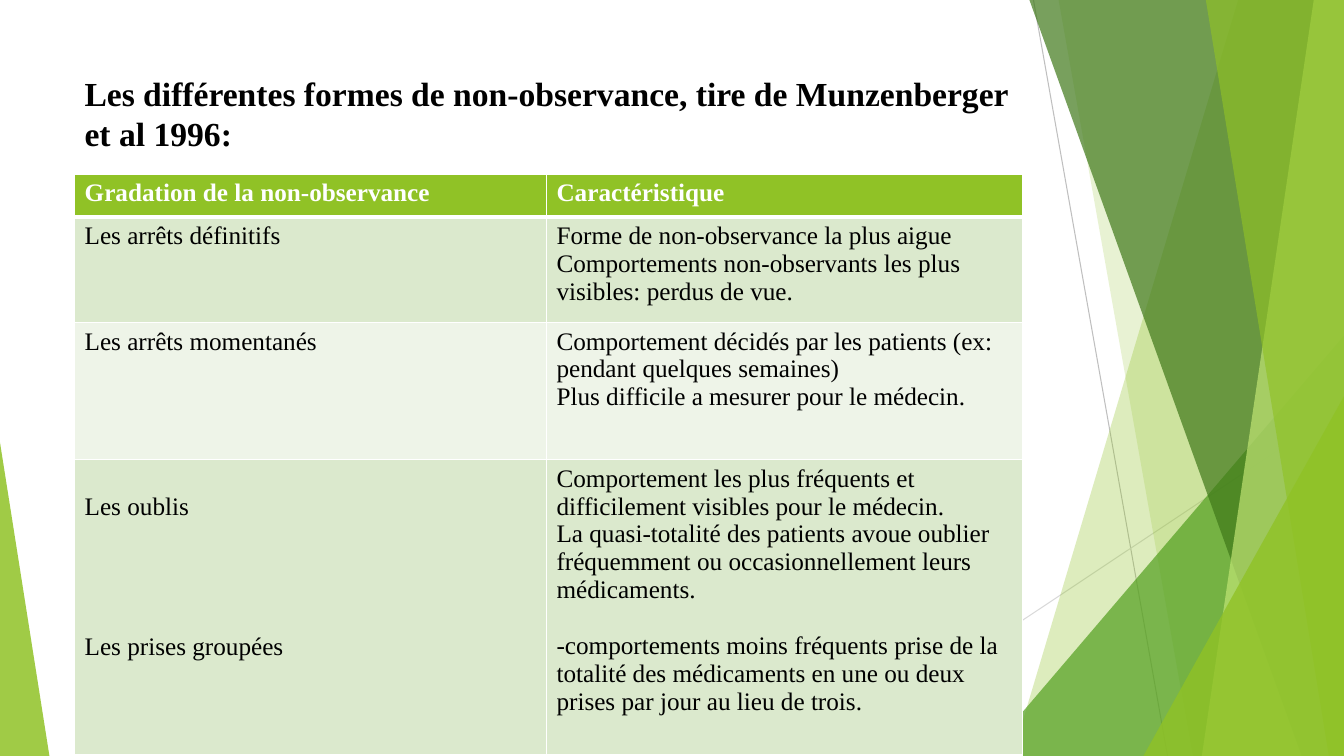
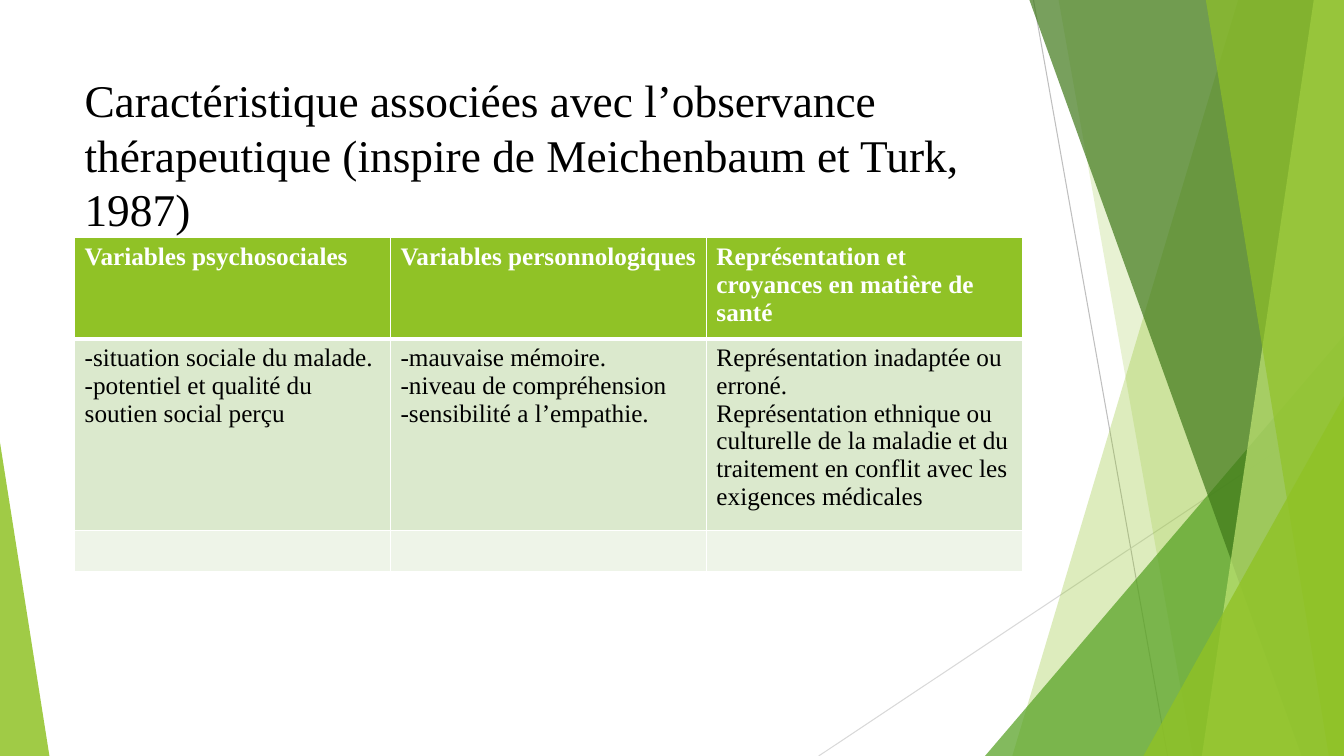
from dataclasses import dataclass

from lxml.etree import SubElement
from pptx import Presentation
from pptx.dml.color import RGBColor
from pptx.enum.shapes import MSO_CONNECTOR, MSO_SHAPE
from pptx.enum.text import MSO_ANCHOR
from pptx.oxml.ns import qn
from pptx.util import Inches, Pt

WIDTH, HEIGHT = 13.33, 7.5
LEFT, CONTENT_WIDTH = 0.74, 9.4


@dataclass(frozen=True)
class Theme:
    font: str = "Times New Roman"
    ink: str = "000000"
    white: str = "FFFFFF"
    lime: str = "90C226"
    pale_lime: str = "C0E474"
    green: str = "54A021"
    dark_green: str = "3F7819"
    odd_row: str = "DBE9CD"
    even_row: str = "EEF4E8"
    dark_rule: str = "BFBFBF"
    light_rule: str = "D9D9D9"
    body_size: float = 18
    small_title: float = 24
    large_title: float = 32.4
    line_height: float = 20
    rule_width: float = 0.75
    border_width: float = 1
    header_border: float = 3


def write(paragraph, text, *, font, size, color, bold=False, before=0):
    paragraph.text = text
    paragraph.font.name = font
    paragraph.font.size = Pt(size)
    paragraph.font.bold = bold
    paragraph.font.color.rgb = RGBColor.from_string(color)
    if before:
        paragraph.space_before = Pt(before)


class Deck:
    def __init__(self, theme):
        self.theme = theme
        self.presentation = Presentation()
        self.presentation.slide_width = Inches(WIDTH)
        self.presentation.slide_height = Inches(HEIGHT)
        self.slide = None

    def new_slide(self):
        blank = self.presentation.slide_layouts[6]
        self.slide = self.presentation.slides.add_slide(blank)
        self.decorate()

    def decorate(self):
        theme = self.theme
        self.rule((10.25, 0), (11.58, HEIGHT), theme.dark_rule)
        self.rule((WIDTH, 4.03), (8.12, HEIGHT), theme.light_rule)
        self.band(12.28, 10.04, theme.lime, 30)
        self.band(10.5, 11.83, theme.lime, 20)
        self.corner(9.77, 3.33, 3.56, 1, theme.green, 72)
        self.band(10.21, 12.91, theme.dark_green, 70)
        self.band(13.03, 11.92, theme.pale_lime, 70)
        self.band(11.96, 13.18, theme.lime, 65)
        self.corner(11.34, 3.93, 1.99, 1, theme.lime, 80)
        self.corner(0, 4.39, 0.49, 0, theme.lime, 85)

    def rule(self, start, end, color):
        connector = self.slide.shapes.add_connector(
            MSO_CONNECTOR.STRAIGHT, *map(Inches, start + end))
        connector.line.color.rgb = RGBColor.from_string(color)
        connector.line.width = Pt(self.theme.rule_width)
        SubElement(connector._element.spPr, qn("a:effectLst"))

    def tint(self, shape, color, opacity):
        shape.shadow.inherit = False
        shape.line.fill.background()
        shape.fill.solid()
        shape.fill.fore_color.rgb = RGBColor.from_string(color)
        rgb = shape._element.spPr.find(qn("a:solidFill"))[0]
        SubElement(rgb, qn("a:alpha"), val=str(opacity * 1000))

    def band(self, top_x, bottom_x, color, opacity):
        builder = self.slide.shapes.build_freeform(Inches(top_x), 0)
        corners = [(WIDTH, 0), (WIDTH, HEIGHT), (bottom_x, HEIGHT)]
        builder.add_line_segments([(Inches(x), Inches(y)) for x, y in corners])
        self.tint(builder.convert_to_shape(), color, opacity)

    def corner(self, left, top, width, apex, color, opacity):
        triangle = self.slide.shapes.add_shape(
            MSO_SHAPE.ISOSCELES_TRIANGLE,
            Inches(left), Inches(top), Inches(width), Inches(HEIGHT - top))
        triangle.adjustments[0] = apex
        self.tint(triangle, color, opacity)

    def title(self, text, height, size, bold=False):
        box = self.slide.shapes.add_textbox(
            Inches(LEFT), Inches(0.67), Inches(CONTENT_WIDTH), Inches(height))
        frame = box.text_frame
        frame.word_wrap = True
        frame.vertical_anchor = MSO_ANCHOR.TOP
        write(frame.paragraphs[0], text, font=self.theme.font, size=size,
              color=self.theme.ink, bold=bold)

    def border(self, cell, side, width):
        line = SubElement(cell._tc.get_or_add_tcPr(), qn(f"a:ln{side}"), w=str(Pt(width)))
        fill = SubElement(line, qn("a:solidFill"))
        SubElement(fill, qn("a:srgbClr"), val=self.theme.white)

    def cell(self, cell, entries, row):
        theme = self.theme
        header = row == 0
        for side in "LRTB":
            thick = (header and side == "B") or (row == 1 and side == "T")
            self.border(cell, side, theme.header_border if thick else theme.border_width)
        cell.fill.solid()
        fill = theme.lime if header else theme.odd_row if row % 2 else theme.even_row
        cell.fill.fore_color.rgb = RGBColor.from_string(fill)
        for index, (text, skipped_lines) in enumerate(entries):
            gap = skipped_lines * theme.line_height
            if index == 0:
                paragraph = cell.text_frame.paragraphs[0]
                cell.margin_top = Inches(0.05) + Pt(gap)
                gap = 0
            else:
                paragraph = cell.text_frame.add_paragraph()
            write(paragraph, text, font=theme.font, size=theme.body_size,
                  color=theme.white if header else theme.ink, bold=header, before=gap)

    def table(self, top, widths, heights, rows):
        frame = self.slide.shapes.add_table(
            len(rows), len(widths), Inches(LEFT), Inches(top),
            Inches(sum(widths)), Inches(sum(heights)))
        grid = frame.table
        for column, width in zip(grid.columns, widths):
            column.width = Inches(width)
        for index, (height, contents) in enumerate(zip(heights, rows)):
            grid.rows[index].height = Inches(height)
            for column, entries in enumerate(contents):
                self.cell(grid.cell(index, column), entries, index)


def lines(*texts):
    return [(text, 0) for text in texts]


FORMS = [
    [lines("Gradation de la non-observance"), lines("Caractéristique")],
    [lines("Les arrêts définitifs"),
     lines("Forme de non-observance la plus aigue",
           "Comportements non-observants les plus visibles: perdus de vue.")],
    [lines("Les arrêts momentanés"),
     lines("Comportement décidés par les patients (ex: pendant quelques semaines)",
           "Plus difficile a mesurer pour le médecin.")],
    [[("Les oublis", 1), ("Les prises groupées", 4)],
     lines("Comportement les plus fréquents et difficilement visibles pour le médecin.",
           "La quasi-totalité des patients avoue oublier fréquemment ou "
           "occasionnellement leurs médicaments.")
     + [("-comportements moins fréquents prise de la totalité des médicaments "
         "en une ou deux prises par jour au lieu de trois.", 1)]],
]

VARIABLES = [
    [lines("Variables psychosociales"), lines("Variables personnologiques"),
     lines("Représentation et croyances en matière de santé")],
    [lines("-situation sociale du malade.",
           "-potentiel et qualité du soutien social perçu"),
     lines("-mauvaise mémoire.", "-niveau de compréhension",
           "-sensibilité a l’empathie."),
     lines("Représentation inadaptée ou erroné.",
           "Représentation ethnique ou culturelle de la maladie et du traitement "
           "en conflit avec les exigences médicales")],
    [[], [], []],
]


def main():
    theme = Theme()
    deck = Deck(theme)
    deck.new_slide()
    deck.title("Les différentes formes de non-observance, tire de Munzenberger et al 1996:",
               height=1.06, size=theme.small_title, bold=True)
    deck.table(1.73, [4.68, 4.72], [0.42, 1.05, 1.36, 2.93], FORMS)

    deck.new_slide()
    deck.title("Caractéristique associées avec l’observance thérapeutique "
               "(inspire de Meichenbaum et Turk, 1987)",
               height=1.54, size=theme.large_title)
    deck.table(2.36, [CONTENT_WIDTH / 3] * 3, [0.41] * 3, VARIABLES)
    deck.presentation.save("out.pptx")


if __name__ == "__main__":
    main()
